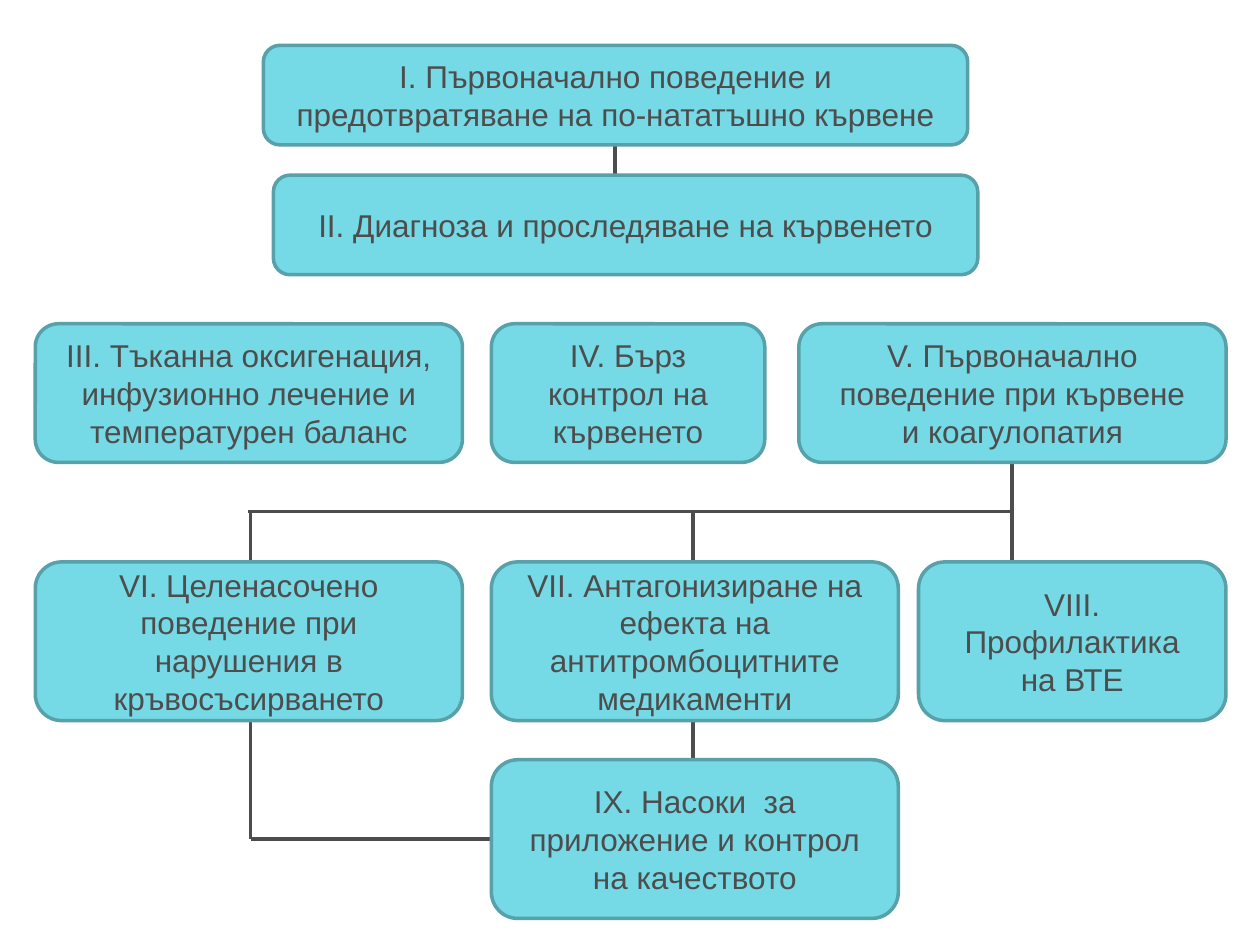
from pptx import Presentation
from pptx.dml.color import RGBColor
from pptx.enum.shapes import MSO_CONNECTOR as Connector, MSO_SHAPE as Shape
from pptx.enum.text import MSO_ANCHOR as Anchor, PP_ALIGN as Align
from pptx.oxml.ns import qn
from pptx.util import Inches, Pt
from lxml import etree

FILL, BORDER, DARK = "75DAE6", "57A1AA", "4D4D4D"
LEFT, MIDDLE, RIGHT = 0.28, 3.9, 9.73
WIDE, MEDIUM = 3.39, 3.23


def color(value):
    return RGBColor.from_string(value)


def add_line(slide, x1, y1, x2, y2):
    connector = slide.shapes.add_connector(
        Connector.STRAIGHT, Inches(x1), Inches(y1), Inches(x2), Inches(y2))
    connector.line.color.rgb = color(DARK)
    connector.line.width = Pt(2)
    etree.SubElement(connector._element.spPr, qn("a:effectLst"))


def write_text(shape, text, size=18, font="Arial", ink=DARK):
    frame = shape.text_frame
    frame.word_wrap = True
    frame.vertical_anchor = Anchor.MIDDLE
    frame.text = text
    for paragraph in frame.paragraphs:
        paragraph.alignment = Align.CENTER
        paragraph.font.size = Pt(size)
        paragraph.font.name = font
        paragraph.font.color.rgb = color(ink)


def add_step(slide, text, left, top, width, height):
    shape = slide.shapes.add_shape(
        Shape.ROUNDED_RECTANGLE, Inches(left), Inches(top), Inches(width), Inches(height))
    shape.shadow.inherit = False
    shape.fill.solid()
    shape.fill.fore_color.rgb = color(FILL)
    shape.line.color.rgb = color(BORDER)
    shape.line.width = Pt(2)
    write_text(shape, text)


def add_row(slide, top, height, steps):
    for text, left, width in steps:
        add_step(slide, text, left, top, width, height)


def add_links(slide):
    trunk, branch, center, start = 8.03, 1.99, 5.5, 4.88
    split, join = 4.06, 6.66
    add_line(slide, start, 0.84, start, 1.79)
    add_line(slide, trunk, 3.67, trunk, 4.69)
    add_line(slide, branch - 0.02, split, trunk, split)
    add_line(slide, center, split, center, 6.35)
    add_line(slide, branch, split, branch, join)
    add_line(slide, branch, join, center, join)


def add_flowchart(slide):
    add_links(slide)
    add_row(slide, 0.36, 0.79, [
        ("I. Първоначално поведение и предотвратяване на по-нататъшно кървене", 2.09, 5.59)])
    add_row(slide, 1.39, 0.79, [
        ("II. Диагноза и проследяване на кървенето", 2.17, 5.59)])
    add_row(slide, 2.57, 1.1, [
        ("III. Тъканна оксигенация, инфузионно лечение и температурен баланс", LEFT, WIDE),
        ("IV. Бърз контрол на кървенето", MIDDLE, 2.17),
        ("V. Първоначално поведение при кървене\nи коагулопатия", RIGHT - WIDE, WIDE)])
    add_row(slide, 4.46, 1.26, [
        ("VI. Целенасочено поведение при нарушения в кръвосъсирването", LEFT, WIDE),
        ("VII. Антагонизиране на ефекта на антитромбоцитните медикаменти", MIDDLE, MEDIUM),
        ("VIII. Профилактика\nна ВТЕ", RIGHT - 2.44, 2.44)])
    add_row(slide, 6.03, 1.26, [
        ("IX. Насоки  за приложение и контрол на качеството", MIDDLE, MEDIUM)])


def main():
    presentation = Presentation()
    presentation.slide_width = Inches(10)
    presentation.slide_height = Inches(7.5)
    slide = presentation.slides.add_slide(presentation.slide_layouts[6])
    add_flowchart(slide)
    presentation.save("out.pptx")


if __name__ == "__main__":
    main()
